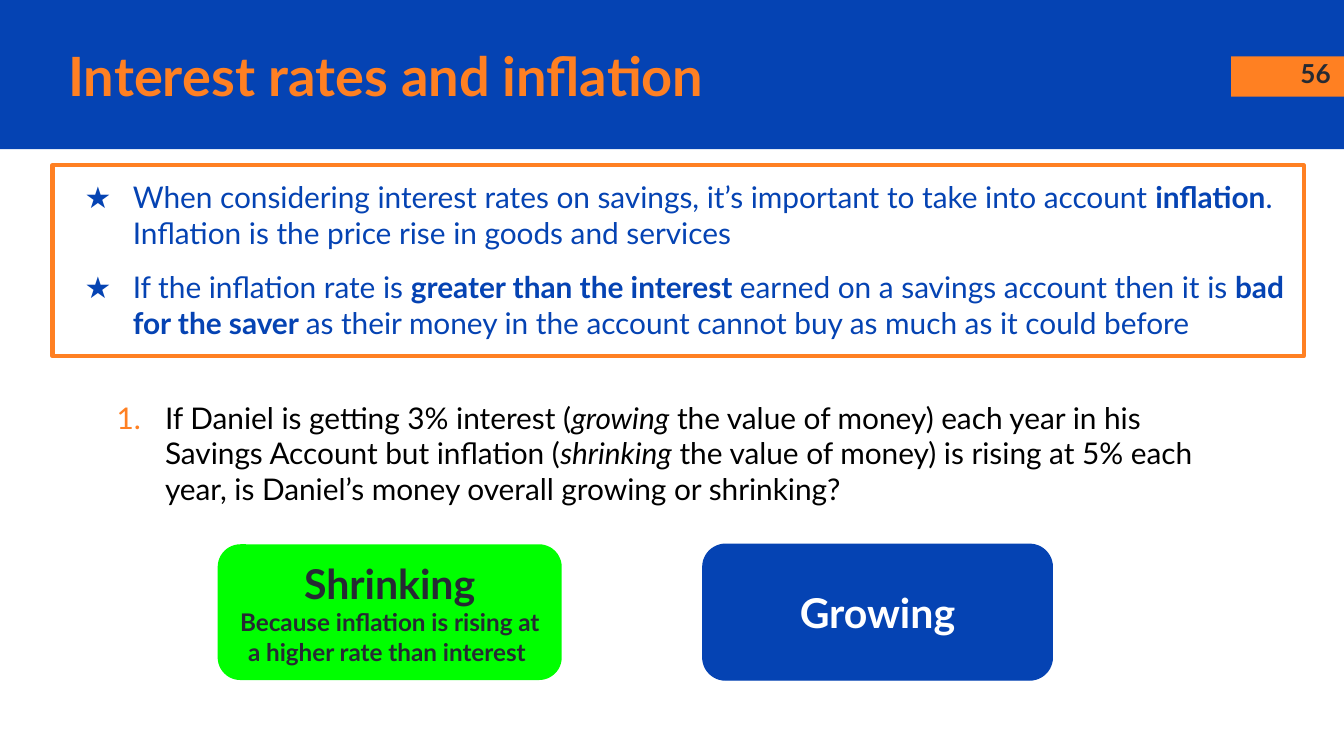
import pptx
import pptx.util
import pptx.dml.color
import pptx.enum.shapes
import pptx.enum.text
import pptx.oxml.ns
from lxml import etree

Inches = pptx.util.Inches
RGBColor = pptx.dml.color.RGBColor
SHAPE = pptx.enum.shapes.MSO_SHAPE
ALIGN = pptx.enum.text.PP_ALIGN
ANCHOR = pptx.enum.text.MSO_ANCHOR

BLUE = RGBColor(0x05, 0x43, 0xB3)
ORANGE = RGBColor(0xFF, 0x80, 0x22)
GREEN = RGBColor(0x00, 0xFF, 0x00)
DARK = RGBColor(0x26, 0x2A, 0x33)
BLACK = RGBColor(0x00, 0x00, 0x00)
WHITE = RGBColor(0xFF, 0xFF, 0xFF)


def add_box(s, kind, x, y, w, h, fill=None, line=None, weight=0.75):
    """Add a preset shape with an optional fill and outline."""
    sp = s.shapes.add_shape(kind, Inches(x), Inches(y), Inches(w), Inches(h))
    sp.shadow.inherit = False
    if fill is None:
        sp.fill.background()
    else:
        sp.fill.solid()
        sp.fill.fore_color.rgb = fill
    if line is None:
        sp.line.fill.background()
    else:
        sp.line.color.rgb = line
        sp.line.width = pptx.util.Pt(weight)
    return sp


def add_textbox(s, x, y, w, h):
    """Add an empty text box."""
    return s.shapes.add_textbox(Inches(x), Inches(y), Inches(w), Inches(h))


def set_frame(sp, anchor=ANCHOR.TOP):
    """Give a shape's text frame even margins and wrapping."""
    tf = sp.text_frame
    tf.word_wrap = True
    tf.vertical_anchor = anchor
    tf.margin_left = tf.margin_right = Inches(0.1)
    tf.margin_top = tf.margin_bottom = Inches(0.1)
    return tf


def add_run(p, text, size, color, bold=False, italic=False):
    """Append one formatted run to a paragraph."""
    r = p.add_run()
    r.text = text
    r.font.name = "Lato"
    r.font.size = pptx.util.Pt(size)
    r.font.color.rgb = color
    r.font.bold = bold
    r.font.italic = italic


def add_bullet(p, color, tag, **attributes):
    """Give a paragraph a hanging indent and a coloured marker."""
    qn = pptx.oxml.ns.qn
    pPr = p._p.get_or_add_pPr()
    pPr.set("marL", str(Inches(0.5)))
    pPr.set("indent", str(Inches(-0.36)))
    clr = etree.SubElement(pPr, qn("a:buClr"))
    etree.SubElement(clr, qn("a:srgbClr"), val=str(color))
    etree.SubElement(pPr, qn("a:buFont"), typeface="Lato")
    etree.SubElement(pPr, qn(tag), **attributes)


def add_header(s, x, y, w, h, title, number):
    """Draw the title band with its page number tag."""
    add_box(s, SHAPE.RECTANGLE, x, y, w, h, BLUE)
    add_box(s, SHAPE.RECTANGLE, x + w - 0.84, y + 0.42, 0.84, 0.3, ORANGE)
    p = set_frame(add_textbox(s, x + w - 0.6, y + 0.33, 0.6, 0.43)).paragraphs[0]
    p.alignment = ALIGN.RIGHT
    add_run(p, number, 14, DARK, bold=True)
    sp = add_textbox(s, x + 0.41, y + 0.28, 8.46, 0.56)
    add_run(set_frame(sp, ANCHOR.MIDDLE).paragraphs[0], title, 29, ORANGE, bold=True)


def add_key_points(s, x, y, w, h, points):
    """Draw the outlined box of starred points, each a list of (text, bold)."""
    tf = set_frame(add_box(s, SHAPE.RECTANGLE, x, y, w, h, line=ORANGE, weight=2.25))
    for i, point in enumerate(points):
        p = tf.add_paragraph() if i else tf.paragraphs[0]
        p.alignment = ALIGN.LEFT
        if i:
            p.space_before = pptx.util.Pt(10)
        add_bullet(p, BLUE, "a:buChar", char="★")
        for text, bold in point:
            add_run(p, text, 16, BLUE, bold=bold)


def add_question(s, x, y, w, h, parts):
    """Write the numbered question from (text, italic) parts."""
    p = set_frame(add_textbox(s, x, y, w, h)).paragraphs[0]
    add_bullet(p, ORANGE, "a:buAutoNum", type="arabicPeriod")
    for text, italic in parts:
        add_run(p, text, 16, BLACK, italic=italic)


def add_answer(s, x, y, w, h, fill, line, color, lines):
    """Draw a rounded answer button from (text, size) lines."""
    sp = add_box(s, SHAPE.ROUNDED_RECTANGLE, x, y, w, h, fill, line)
    tf = set_frame(sp, ANCHOR.MIDDLE)
    for i, (text, size) in enumerate(lines):
        p = tf.add_paragraph() if i else tf.paragraphs[0]
        p.alignment = ALIGN.CENTER
        add_run(p, text, size, color, bold=True)


def main():
    """Build the slide and save it."""
    prs = pptx.Presentation()
    prs.slide_width = Inches(10)
    prs.slide_height = prs.slide_width * 9 // 16
    s = prs.slides.add_slide(prs.slide_layouts[6])
    add_header(s, 0, 0, 10, 1.11, "Interest rates and inflation", "56")
    add_question(s, 0.63, 2.87, 8.46, 1.52, [
        ("If Daniel is getting 3% interest (", False),
        ("growing", True),
        (" the value of money) each year in his Savings Account but inflation (", False),
        ("shrinking", True),
        (" the value of money) is rising at 5% each year, is Daniel’s money "
         "overall growing or shrinking?", False),
    ])
    add_answer(s, 5.23, 4.05, 2.6, 1.01, BLUE, BLUE, WHITE, [("Growing", 22)])
    add_answer(s, 1.62, 4.05, 2.56, 1.01, GREEN, None, DARK, [
        ("Shrinking", 22),
        ("Because inflation is rising at a higher rate than interest ", 13),
    ])
    add_key_points(s, 0.39, 1.23, 9.31, 1.42, [
        [("When considering interest rates on savings, it’s important to take into account",
          False),
         (" inflation", True),
         (". Inflation is the price rise in goods and services", False)],
        [("If the inflation rate is ", False),
         ("greater than the interest ", True),
         ("earned on a savings account then it is", False),
         (" bad for the saver ", True),
         ("as their money in the account cannot buy as much as it could before", False)],
    ])
    prs.save("out.pptx")


if __name__ == "__main__":
    main()
